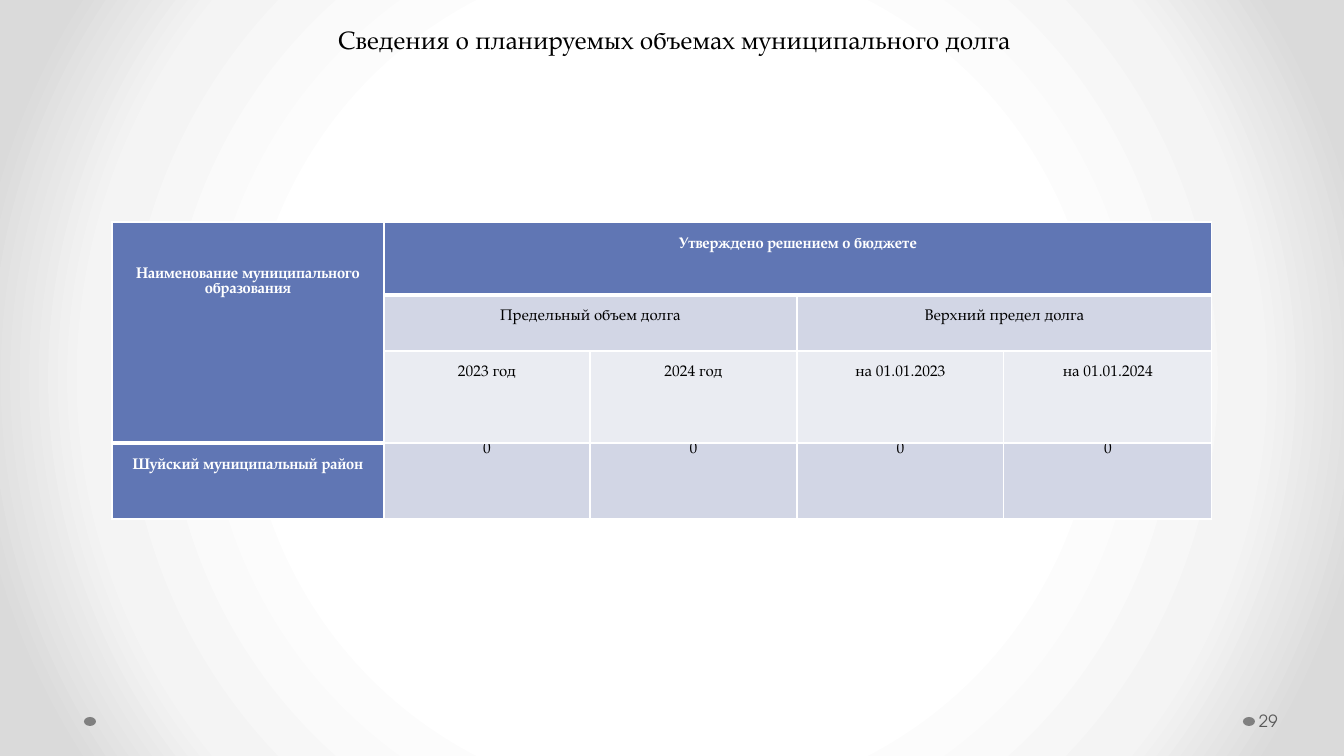
from dataclasses import dataclass

from pptx import Presentation
from pptx import util as u
from pptx.dml.color import RGBColor
from pptx.enum import shapes, text
from pptx.oxml import parse_xml
from pptx.oxml.ns import nsdecls, qn

TITLE = "Сведения о планируемых объемах муниципального долга "
PAGE_NUMBER = "29"

# row, column, rows spanned, columns spanned, wording, blank lines above, style
CELLS = [
    (0, 0, 3, 1, "Наименование муниципального образования", 3, "head"),
    (0, 1, 1, 4, "Утверждено решением о бюджете", 1, "head"),
    (1, 1, 1, 2, "Предельный объем долга", 1, "dark"),
    (1, 3, 1, 2, "Верхний предел долга", 1, "dark"),
    (2, 1, 1, 1, "2023 год", 1, "light"),
    (2, 2, 1, 1, "2024 год", 1, "light"),
    (2, 3, 1, 1, "на 01.01.2023", 1, "light"),
    (2, 4, 1, 1, "на 01.01.2024", 1, "light"),
    (3, 0, 1, 1, "Шуйский муниципальный район", 1, "head"),
] + [(3, column, 1, 1, "0", 0, "dark") for column in range(1, 5)]

# Lengths in px
PAGE = (1344, 756)
TITLE_BOX = (85, 19, 1185, 132)
NUMBER_BOX = (1256, 701, 83, 40)
DOT_LEFTS, DOT_TOP, DOT_SIZE = (84, 1243), 717, (12, 9)
TABLE_AT = (112, 222)
COLUMNS = [272, 206, 207, 207, 208]
ROWS = [73, 56, 92, 76]
CELL_SIDE, LINE = 7, 15


@dataclass(frozen=True)
class Theme:
    serif: str = "TeX Gyre Pagella"
    sans: str = "TeX Gyre Adventor"
    ink: str = "000000"
    white: str = "FFFFFF"
    dot: str = "808080"
    number: str = "595959"
    head: str = "6076B4"
    dark: str = "D2D6E5"
    light: str = "EAECF2"
    glow: tuple = ((50, "FFFFFF"), (76, "F4F4F4"), (92, "DADADA"))
    title_size: int = 18
    number_size: int = 12
    cell_size: int = 11
    thin: int = 1
    thick: int = 3


THEME = Theme()


def px(length):
    return u.Emu(round(length * 914400 / 100.8))


def rgb(code):
    return RGBColor.from_string(code)


def write(frame, wording, font, size, color, bold=False, align=text.PP_ALIGN.CENTER):
    frame.word_wrap = True
    para = frame.paragraphs[0]
    para.alignment = align
    span = para.add_run()
    span.text = wording
    span.font.name, span.font.size, span.font.bold = font, u.Pt(size), bold
    span.font.color.rgb = rgb(color)
    return para


def paint_background(page):
    """Radial gradient, light in the middle."""
    page.background.fill.solid()
    holder = page.element.find(".//" + qn("p:bgPr"))
    stops = "".join(
        f'<a:gs pos="{place * 1000}"><a:srgbClr val="{color}"/></a:gs>'
        for place, color in THEME.glow)
    gradient = parse_xml(
        f'<a:gradFill {nsdecls("a")} rotWithShape="1"><a:gsLst>{stops}</a:gsLst>'
        '<a:path path="circle"><a:fillToRect l="50000" t="50000" r="50000" b="50000"/>'
        '</a:path></a:gradFill>')
    holder.replace(holder.find(qn("a:solidFill")), gradient)


def rule_below(row, column):
    """Heavy rule under the blue heading cells, thin elsewhere."""
    heavy = row == 2 if column == 0 else row == 0
    return THEME.thick if heavy else THEME.thin


def set_borders(cell, row, column):
    widths = {"L": THEME.thin, "R": THEME.thin,
              "T": rule_below(row - 1, column), "B": rule_below(row, column)}
    properties = cell._tc.get_or_add_tcPr()
    for index, (side, width) in enumerate(widths.items()):
        properties.insert(index, parse_xml(
            f'<a:ln{side} {nsdecls("a")} w="{u.Pt(width)}"><a:solidFill>'
            f'<a:srgbClr val="{THEME.white}"/></a:solidFill></a:ln{side}>'))


def add_debt_table(page):
    table = page.shapes.add_table(
        len(ROWS), len(COLUMNS), *map(px, (*TABLE_AT, sum(COLUMNS), sum(ROWS)))).table
    for column, width in zip(table.columns, COLUMNS):
        column.width = px(width)
    for row, height in zip(table.rows, ROWS):
        row.height = px(height)

    for top, left, down, across, wording, blank_lines, style in CELLS:
        cell = table.cell(top, left)
        for row in range(top, top + down):
            for column in range(left, left + across):
                part = table.cell(row, column)
                part.margin_left = part.margin_right = px(CELL_SIDE)
                part.margin_top = part.margin_bottom = 0
                part.fill.solid()
                part.fill.fore_color.rgb = rgb(getattr(THEME, style))
                set_borders(part, row, column)
        if down * across > 1:
            cell.merge(table.cell(top + down - 1, left + across - 1))
        cell.margin_top = px(blank_lines * LINE)
        is_head = style == "head"
        para = write(cell.text_frame, wording, THEME.serif, THEME.cell_size,
                     THEME.white if is_head else THEME.ink, is_head)
        para.line_spacing = u.Pt(THEME.cell_size)


def add_footer(page):
    for left in DOT_LEFTS:
        dot = page.shapes.add_shape(
            shapes.MSO_SHAPE.OVAL, *map(px, (left, DOT_TOP, *DOT_SIZE)))
        dot.shadow.inherit = False
        dot.fill.solid()
        dot.fill.fore_color.rgb = rgb(THEME.dot)
        dot.line.fill.background()
    frame = page.shapes.add_textbox(*map(px, NUMBER_BOX)).text_frame
    frame.margin_left = px(3)
    frame.margin_right = px(5)
    frame.vertical_anchor = text.MSO_ANCHOR.MIDDLE
    write(frame, PAGE_NUMBER, THEME.sans, THEME.number_size, THEME.number,
          align=text.PP_ALIGN.LEFT)


def main():
    deck = Presentation()
    deck.slide_width, deck.slide_height = map(px, PAGE)
    page = deck.slides.add_slide(deck.slide_layouts[6])
    paint_background(page)
    add_footer(page)
    title = page.shapes.add_textbox(*map(px, TITLE_BOX))
    write(title.text_frame, TITLE, THEME.serif, THEME.title_size, THEME.ink)
    add_debt_table(page)
    deck.save("out.pptx")


if __name__ == "__main__":
    main()
